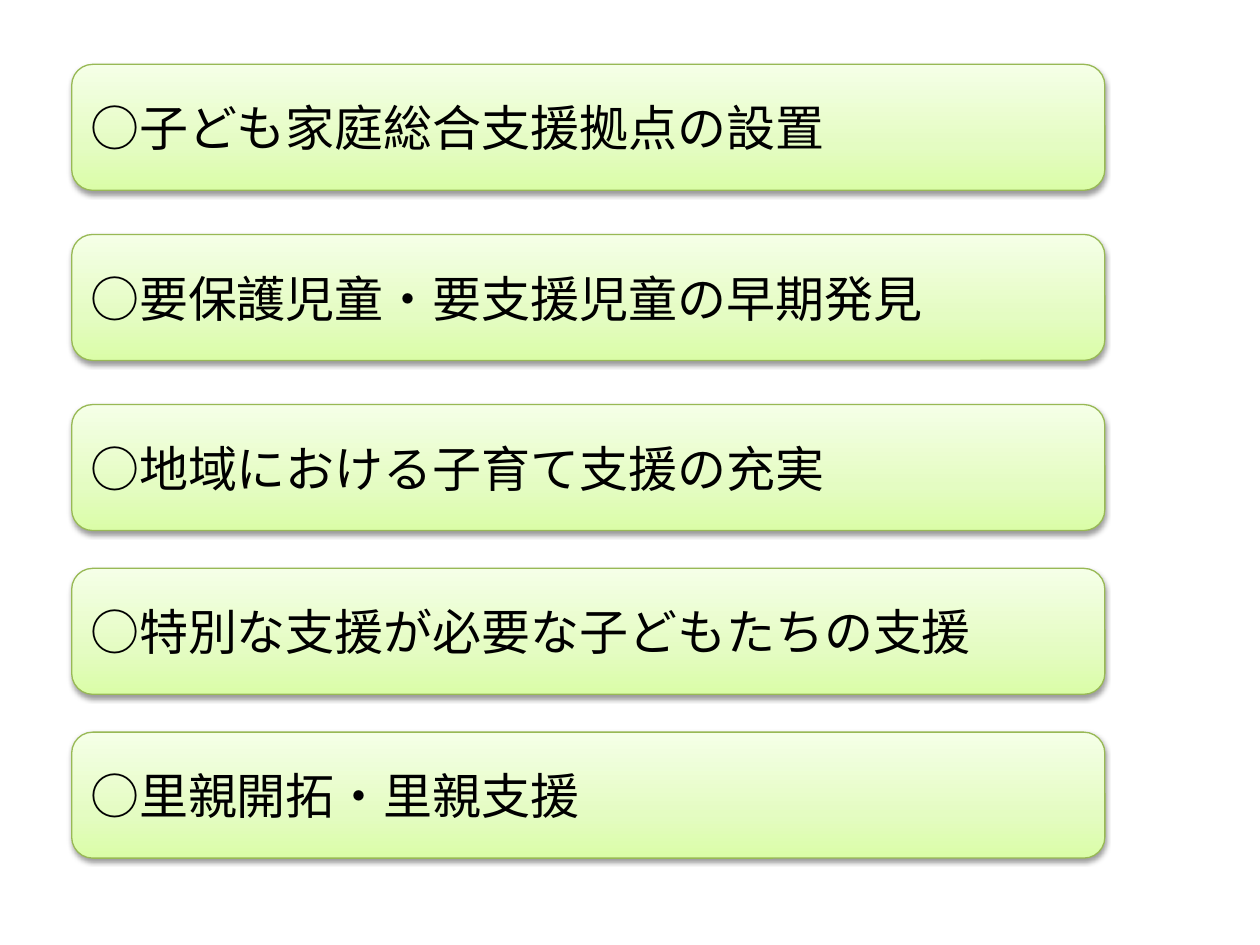
from copy import deepcopy

from lxml.etree import SubElement
from pptx import Presentation
from pptx.dml.color import RGBColor
from pptx.enum.shapes import MSO_SHAPE as Shape
from pptx.enum.text import MSO_ANCHOR as Anchor, PP_ALIGN as Align
from pptx.oxml.ns import qn
from pptx.util import Pt

BLACK = RGBColor(0x00, 0x00, 0x00)
EDGE = RGBColor(0x98, 0xB9, 0x55)
STOPS = [
    (0, RGBColor(0xDA, 0xFD, 0xA7)),
    (0.35, RGBColor(0xE4, 0xFC, 0xC2)),
    (1, RGBColor(0xF5, 0xFF, 0xE7)),
]
FONT = "Noto Sans CJK JP"
ITEMS = [
    "○子ども家庭総合支援拠点の設置",
    "○要保護児童・要支援児童の早期発見",
    "○地域における子育て支援の充実",
    "○特別な支援が必要な子どもたちの支援",
    "○里親開拓・里親支援",
]
GAPS = [25.2, 25.2, 21.6, 21.6, 0]  # space below each bar


def fill_bar(bar):
    """Fade the bar from green at the bottom to pale at the top."""
    bar.fill.gradient()
    bar.fill.gradient_angle = 90
    stops = bar.element.spPr.find(".//" + qn("a:gsLst"))
    stops.append(deepcopy(stops[-1]))
    for stop, (place, color) in zip(bar.fill.gradient_stops, STOPS):
        stop.position = place
        stop.color.rgb = color


def add_shadow(bar):
    bar.shadow.inherit = False
    effects = bar.element.spPr.find(qn("a:effectLst"))
    shadow = SubElement(
        effects, qn("a:outerShdw"), blurRad=str(Pt(3.1)), dist=str(Pt(1.6)),
        dir="5400000", rotWithShape="0")
    color = SubElement(shadow, qn("a:srgbClr"), val=str(BLACK))
    SubElement(color, qn("a:alpha"), val="38000")


def add_bar(slide, text, left, top, width, height):
    bar = slide.shapes.add_shape(
        Shape.ROUNDED_RECTANGLE, Pt(left), Pt(top), Pt(width), Pt(height))
    fill_bar(bar)
    bar.line.color.rgb = EDGE
    bar.line.width = Pt(0.75)
    add_shadow(bar)

    frame = bar.text_frame
    frame.text = text
    frame.word_wrap = True
    frame.vertical_anchor = Anchor.MIDDLE
    para = frame.paragraphs[0]
    para.alignment = Align.LEFT
    font = para.runs[0].font
    font.size = Pt(28)
    font.name = FONT
    font.color.rgb = BLACK
    SubElement(para.runs[0].font._element, qn("a:ea"), typeface=FONT)


def add_list(slide, left, top, width, height):
    """Stack one bar per item, each of the given bar size."""
    for text, gap in zip(ITEMS, GAPS):
        add_bar(slide, text, left, top, width, height)
        top += height + gap


def main():
    deck = Presentation()
    deck.slide_width, deck.slide_height = Pt(720), Pt(540)
    slide = deck.slides.add_slide(deck.slide_layouts[6])
    add_list(slide, left=41, top=36.8, width=590.4, height=72)
    deck.save("out.pptx")


if __name__ == "__main__":
    main()
